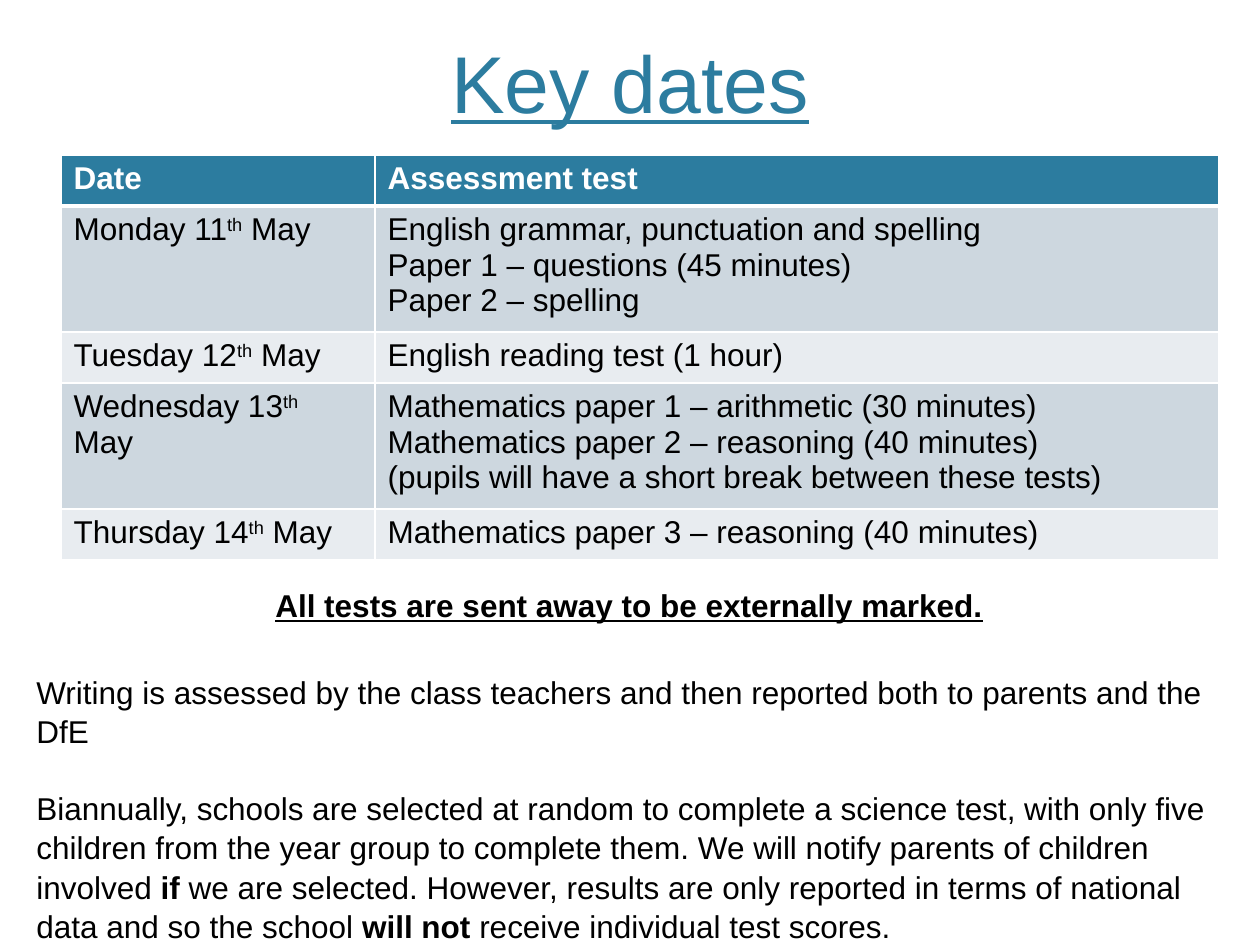
from lxml import etree
from pptx import Presentation
from pptx import util as u
from pptx.dml.color import RGBColor
from pptx.enum import text
from pptx.oxml.ns import qn

PX = u.Inches(1) // 126
TEAL, BLACK, WHITE = "2C7C9F", "000000", "FFFFFF"
BANDS = ["CDD7DF", "E8ECF0"]
LEFT, WIDTH = 24, 1210

HEADER = ["Date", "Assessment test"]
TESTS = [
    ("Monday 11", ["English grammar, punctuation and spelling",
                   "Paper 1 – questions (45 minutes)",
                   "Paper 2 – spelling"]),
    ("Tuesday 12", ["English reading test (1 hour)"]),
    ("Wednesday 13", ["Mathematics paper 1 – arithmetic (30 minutes)",
                      "Mathematics paper 2 – reasoning (40 minutes)",
                      "(pupils will have a short break between these tests)"]),
    ("Thursday 14", ["Mathematics paper 3 – reasoning (40 minutes)"]),
]
MARKING = "All tests are sent away to be externally marked."
WRITING = ("Writing is assessed by the class teachers and then reported "
           "both to parents and the DfE")
SCIENCE = [
    ("Biannually, schools are selected at random to complete a science test, "
     "with only five children from the year group to complete them. We will "
     "notify parents of children involved ", {}),
    ("if", {"bold": True}),
    (" we are selected. However, results are only reported in terms of "
     "national data and so the school ", {}),
    ("will not", {"bold": True}),
    (" receive individual test scores.", {}),
]


def rgb(color):
    return RGBColor.from_string(color)


def box(*lengths):
    return [n * PX for n in lengths]


class Deck:
    font, size = "Arial", 18

    def __init__(self, width, height):
        self.prs = Presentation()
        self.prs.slide_width, self.prs.slide_height = box(width, height)
        self.s = self.prs.slides.add_slide(self.prs.slide_layouts[5])

    def style(self, p, color=BLACK, size=None, bold=False, underline=False):
        f = p.font
        f.name, f.size, f.bold = self.font, u.Pt(size or self.size), bold
        f.underline = underline
        f.color.rgb = rgb(color)

    def fill_text(self, tf, paragraphs, **style):
        """Each paragraph is a list of (text, run font settings)."""
        for i, runs in enumerate(paragraphs):
            p = tf.add_paragraph() if i else tf.paragraphs[0]
            self.style(p, **style)
            for words, settings in runs:
                r = p.add_run()
                r.text = words
                if settings.get("bold"):
                    r.font.bold = True
                if settings.get("superscript"):
                    r.font._element.set("baseline", "30000")

    def title(self, words, x, y, w, h):
        sp = self.s.shapes.title
        sp.left, sp.top, sp.width, sp.height = box(x, y, w, h)
        tf = sp.text_frame
        tf.vertical_anchor = text.MSO_ANCHOR.BOTTOM
        self.fill_text(tf, [[(words, {})]], color=TEAL, size=46, underline=True)
        tf.paragraphs[0].alignment = text.PP_ALIGN.CENTER

    def textbox(self, paragraphs, x, y, w, h, **style):
        tf = self.s.shapes.add_textbox(*box(x, y, w, h)).text_frame
        tf.word_wrap = True
        self.fill_text(tf, paragraphs, **style)
        return tf

    def borders(self, cell, bottom):
        tcPr = cell._tc.get_or_add_tcPr()
        widths = {"a:lnL": 1, "a:lnR": 1, "a:lnT": 1, "a:lnB": bottom}
        for i, (tag, width) in enumerate(widths.items()):
            ln = etree.Element(qn(tag), w=str(u.Pt(width)))
            fill = etree.SubElement(ln, qn("a:solidFill"))
            etree.SubElement(fill, qn("a:srgbClr"), val=WHITE)
            tcPr.insert(i, ln)

    def table(self, rows, x, y, columns, heights):
        frame = self.s.shapes.add_table(
            len(rows), len(columns), *box(x, y, sum(columns), sum(heights)))
        table = frame.table
        for column, width in zip(table.columns, columns):
            column.width = width * PX
        for i, (cells, height) in enumerate(zip(rows, heights)):
            table.rows[i].height = height * PX
            header = i == 0
            for j, paragraphs in enumerate(cells):
                cell = table.cell(i, j)
                cell.fill.solid()
                cell.fill.fore_color.rgb = rgb(TEAL if header else BANDS[(i - 1) % 2])
                self.borders(cell, 3 if header or i == 0 else 1)
                self.fill_text(cell.text_frame, paragraphs,
                               color=WHITE if header else BLACK, bold=header)


def main():
    deck = Deck(1260, 945)
    deck.title("Key dates", 76, -48, 1108, 184)

    body = deck.textbox([[(WRITING, {})], SCIENCE], LEFT, 665, WIDTH, 280)
    for p in body.paragraphs:
        p.line_spacing = 1.04
    body.paragraphs[1].space_before = u.Pt(21.6)

    rows = [[[[(name, {})]] for name in HEADER]]
    for day, tests in TESTS:
        date = [(day, {}), ("th", {"superscript": True}), (" May", {})]
        rows.append([[date], [[(test, {})] for test in tests]])
    deck.table(rows, 61, 155, [314, 844], [51, 126, 51, 126, 51])

    note = deck.textbox([[(MARKING, {})]], LEFT, 580, WIDTH, 50,
                        bold=True, underline=True)
    note.paragraphs[0].alignment = text.PP_ALIGN.CENTER

    deck.prs.save("out.pptx")


if __name__ == "__main__":
    main()
